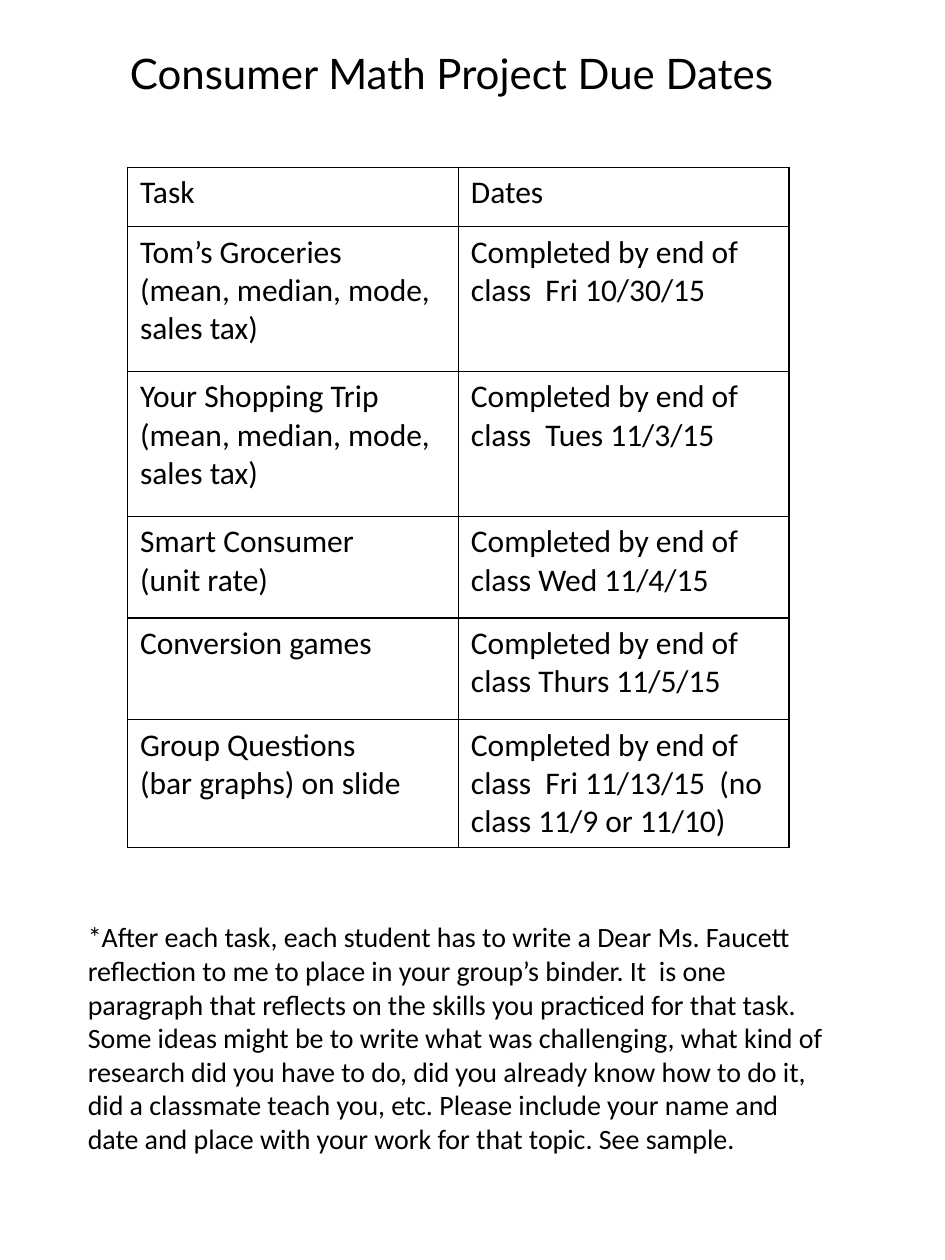
from lxml import etree
from pptx import Presentation
from pptx.dml.color import RGBColor
from pptx.enum import text
from pptx.oxml.ns import qn
from pptx.util import Cm, Pt

BLACK, WHITE = "000000", "FFFFFF"
ROW_HEIGHTS = [1.19, 2.92, 2.92, 2.05, 2.05, 2.46]
COLUMN_WIDTH = 6.67
SKILLS = "(mean, median, mode, sales tax)"

# Each row: the paragraphs of the task, then the due date
SCHEDULE = [
    (["Task"], "Dates"),
    (["Tom’s Groceries", SKILLS], "Completed by end of class  Fri 10/30/15"),
    (["Your Shopping Trip", SKILLS], "Completed by end of class  Tues 11/3/15"),
    (["Smart Consumer", "(unit rate)"], "Completed by end of class Wed 11/4/15"),
    (["Conversion games"], "Completed by end of class Thurs 11/5/15"),
    (["Group Questions", "(bar graphs) on slide"],
     "Completed by end of class  Fri 11/13/15  (no class 11/9 or 11/10)"),
]
REFLECTION_NOTE = (
    "*After each task, each student has to write a Dear Ms. Faucett reflection "
    "to me to place in your group’s binder. It  is one paragraph that reflects "
    "on the skills you practiced for that task. Some ideas might be to write "
    "what was challenging, what kind of research did you have to do, did you "
    "already know how to do it, did a classmate teach you, etc. Please include "
    "your name and date and place with your work for that topic. See sample."
)


def color(value):
    return RGBColor.from_string(value)


def write(frame, paragraphs, size, font="Calibri", align=text.PP_ALIGN.LEFT):
    frame.word_wrap = True
    for index, words in enumerate(paragraphs):
        para = frame.paragraphs[0] if index == 0 else frame.add_paragraph()
        para.alignment = align
        span = para.add_run()
        span.text = words
        span.font.name = font
        span.font.size = Pt(size)
        span.font.color.rgb = color(BLACK)


def add_title(page, words):
    title = page.shapes.title
    title.left, title.top = Cm(1.9), Cm(0.84)
    title.width, title.height = Cm(14.4), Cm(3.84)
    frame = title.text_frame
    frame.auto_size = text.MSO_AUTO_SIZE.NONE
    frame.vertical_anchor = text.MSO_ANCHOR.TOP
    write(frame, [words], 24, "Lato", text.PP_ALIGN.CENTER)


def outline_cell(cell):
    """Draw the four borders; they must come before the cell's fill."""
    properties = cell._tc.get_or_add_tcPr()
    for side in ("a:lnL", "a:lnR", "a:lnT", "a:lnB"):
        line = etree.SubElement(properties, qn(side), w=str(Pt(1)))
        fill = etree.SubElement(line, qn("a:solidFill"))
        etree.SubElement(fill, qn("a:srgbClr"), val=BLACK)


def add_schedule(page):
    frame = page.shapes.add_table(
        len(SCHEDULE), 2, Cm(2.57), Cm(3.38),
        Cm(2 * COLUMN_WIDTH), Cm(sum(ROW_HEIGHTS)))
    table = frame.table
    table.first_row = table.horz_banding = False
    for column in table.columns:
        column.width = Cm(COLUMN_WIDTH)
    for row, height, (task, date) in zip(table.rows, ROW_HEIGHTS, SCHEDULE):
        row.height = Cm(height)
        for cell, paragraphs in zip(row.cells, (task, [date])):
            outline_cell(cell)
            cell.fill.solid()
            cell.fill.fore_color.rgb = color(WHITE)
            write(cell.text_frame, paragraphs, 18)


def add_note(page, words):
    box = page.shapes.add_textbox(Cm(1.52), Cm(18.42), Cm(15.44), Cm(5.05))
    box.text_frame.auto_size = text.MSO_AUTO_SIZE.SHAPE_TO_FIT_TEXT
    write(box.text_frame, [words], 16)


def main():
    deck = Presentation()
    deck.slide_width, deck.slide_height = Cm(19.05), Cm(25.4)
    page = deck.slides.add_slide(deck.slide_layouts.get_by_name("Title Only"))
    add_title(page, "Consumer Math Project Due Dates")
    add_schedule(page)
    add_note(page, REFLECTION_NOTE)
    deck.save("out.pptx")


if __name__ == "__main__":
    main()
